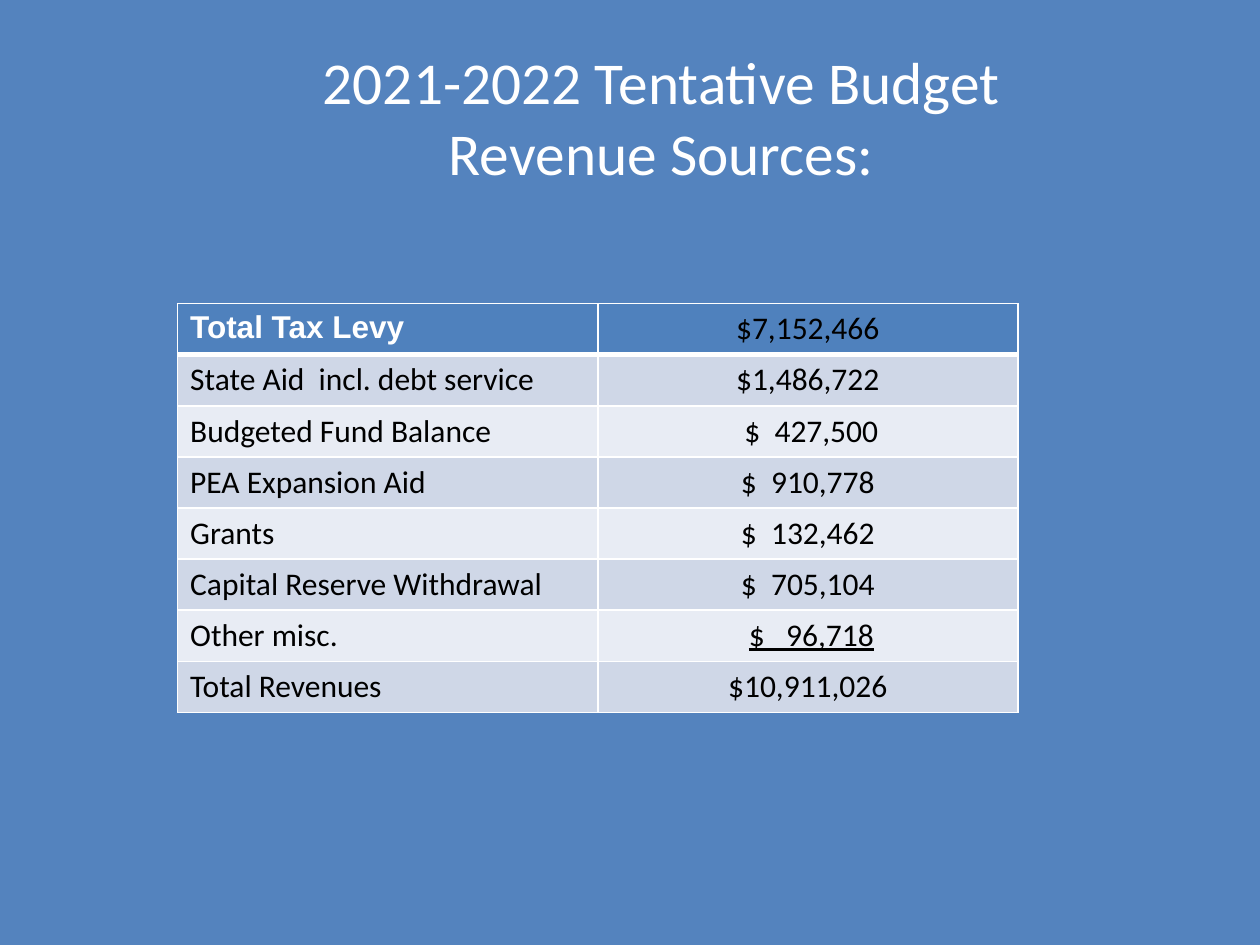
"""Build the tentative budget slide with its table of revenue sources."""
from dataclasses import dataclass

from lxml import etree
from pptx import Presentation
from pptx import util as u
from pptx.dml.color import RGBColor
from pptx.enum import text
from pptx.oxml import ns

BACKGROUND = RGBColor(0x54, 0x83, 0xBE)
HEADER = RGBColor(0x4F, 0x81, 0xBD)
BAND_DARK = RGBColor(0xCF, 0xD7, 0xE7)
BAND_LIGHT = RGBColor(0xE8, 0xEC, 0xF4)
WHITE = RGBColor(0xFF, 0xFF, 0xFF)
BLACK = RGBColor(0x00, 0x00, 0x00)

COLUMN_WIDTH = u.Cm(8.47)
ROW_HEIGHT = u.Cm(1.03)


@dataclass(frozen=True)
class Revenue:
    """One revenue source with its amount."""
    source: str
    amount: str
    indent: str = ""
    underlined: bool = False


REVENUES = [
    Revenue("Total Tax Levy", "$7,152,466"),
    Revenue("State Aid  incl. debt service", "$1,486,722"),
    Revenue("Budgeted Fund Balance", "$  427,500", indent=" "),
    Revenue("PEA Expansion Aid", "$  910,778"),
    Revenue("Grants", "$  132,462"),
    Revenue("Capital Reserve Withdrawal", "$  705,104"),
    Revenue("Other misc.", "$   96,718", indent=" ", underlined=True),
    Revenue("Total Revenues", "$10,911,026"),
]


def write(paragraph, words: str, *, size: float = 18, font: str = "Calibri",
          color: RGBColor = BLACK, bold: bool = False, underline: bool = False,
          align=text.PP_ALIGN.LEFT) -> None:
    """Add a formatted run to the paragraph."""
    paragraph.alignment = align
    run = paragraph.add_run()
    run.text = words
    run.font.size = u.Pt(size)
    run.font.name = font
    run.font.bold = bold
    run.font.underline = underline
    run.font.color.rgb = color


def set_borders(cell, top: float, bottom: float) -> None:
    """Give the cell white borders, with widths in points."""
    properties = cell._tc.get_or_add_tcPr()
    for side, width in {"L": 1, "R": 1, "T": top, "B": bottom}.items():
        line = etree.SubElement(properties, ns.qn(f"a:ln{side}"), w=str(u.Pt(width)))
        fill = etree.SubElement(line, ns.qn("a:solidFill"))
        etree.SubElement(fill, ns.qn("a:srgbClr"), val=str(WHITE))


def draw_title(slide, lines: list[str]) -> None:
    """Place and fill the title placeholder."""
    title = slide.shapes.title
    title.left, title.top = u.Cm(1.27), u.Cm(0.76)
    title.width, title.height = u.Cm(24.13), u.Cm(3.18)
    frame = title.text_frame
    frame.auto_size = text.MSO_AUTO_SIZE.NONE
    frame.vertical_anchor = text.MSO_ANCHOR.MIDDLE
    heading = frame.paragraphs[0]
    for number, line in enumerate(lines):
        if number:
            heading.add_line_break()
        write(heading, line, size=33.9, color=WHITE, align=text.PP_ALIGN.CENTER)


def draw_revenues(slide, revenues: list[Revenue]) -> None:
    """Draw the banded table of revenue sources."""
    table = slide.shapes.add_table(
        len(revenues), 2, u.Cm(3.58), u.Cm(6.12),
        COLUMN_WIDTH * 2, ROW_HEIGHT * len(revenues)).table
    for column in table.columns:
        column.width = COLUMN_WIDTH
    for number, revenue in enumerate(revenues):
        table.rows[number].height = ROW_HEIGHT
        is_header = number == 0
        band = HEADER if is_header else BAND_DARK if number % 2 else BAND_LIGHT
        source, amount = table.rows[number].cells
        for cell in (source, amount):
            set_borders(cell, top=3 if number == 1 else 1, bottom=3 if is_header else 1)
            cell.fill.solid()
            cell.fill.fore_color.rgb = band
        heading = {"font": "Arial", "color": WHITE, "bold": True} if is_header else {}
        write(source.text_frame.paragraphs[0], revenue.source, **heading)
        figure = amount.text_frame.paragraphs[0]
        if revenue.indent:
            write(figure, revenue.indent, align=text.PP_ALIGN.CENTER)
        write(figure, revenue.amount, underline=revenue.underlined,
              align=text.PP_ALIGN.CENTER)


def main() -> None:
    """Build and save the presentation."""
    deck = Presentation()
    deck.slide_width, deck.slide_height = u.Cm(25.4), u.Cm(19.05)
    slide = deck.slides.add_slide(deck.slide_layouts.get_by_name("Title Only"))
    slide.background.fill.solid()
    slide.background.fill.fore_color.rgb = BACKGROUND
    draw_title(slide, ["2021-2022 Tentative Budget", "Revenue Sources:"])
    draw_revenues(slide, REVENUES)
    deck.save("out.pptx")


if __name__ == "__main__":
    main()
